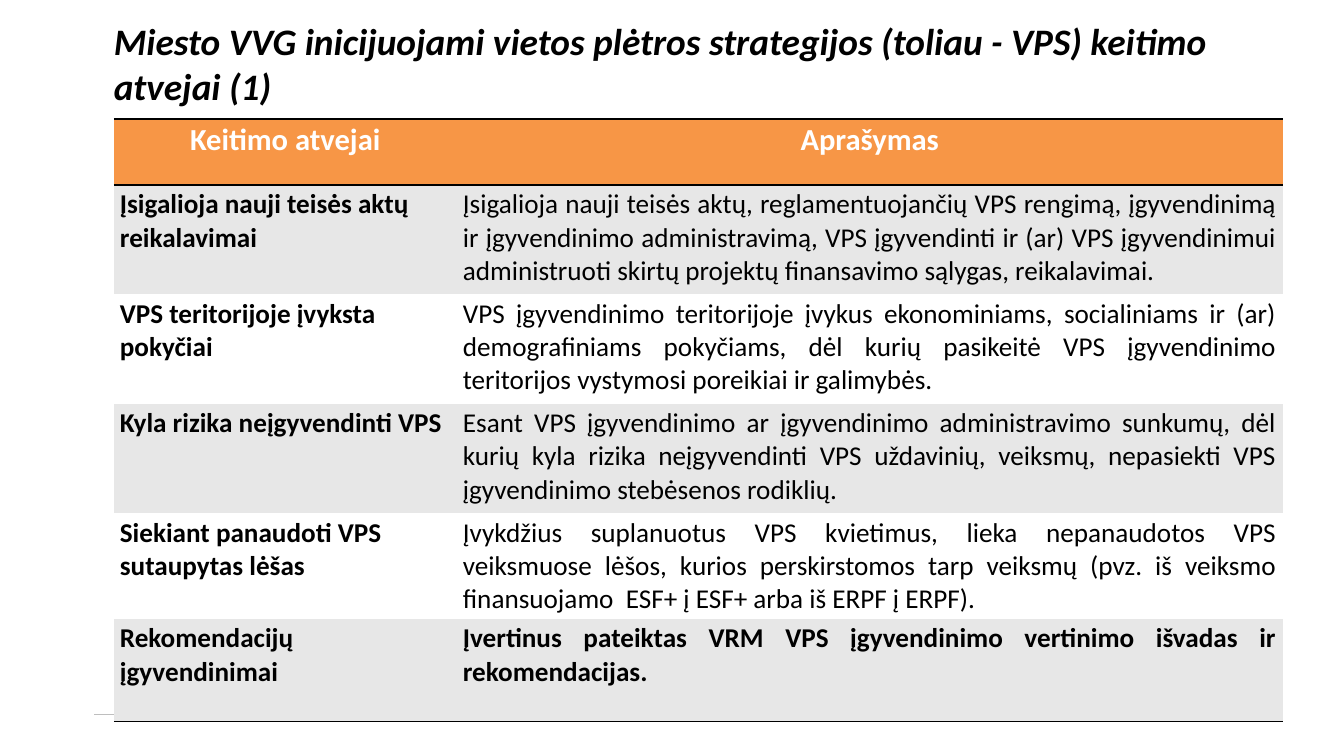
from lxml import etree
from pptx import Presentation
from pptx.dml.color import RGBColor
from pptx.enum.shapes import MSO_CONNECTOR
from pptx.enum.text import MSO_ANCHOR, MSO_AUTO_SIZE, PP_ALIGN
from pptx.oxml.ns import qn
from pptx.util import Pt

LEFT, CENTER, JUSTIFY = PP_ALIGN.LEFT, PP_ALIGN.CENTER, PP_ALIGN.JUSTIFY
TOP, NO_FIT = MSO_ANCHOR.TOP, MSO_AUTO_SIZE.NONE
STRAIGHT = MSO_CONNECTOR.STRAIGHT

# Content
TITLE = "Miesto VVG inicijuojami vietos plėtros strategijos (toliau - VPS) keitimo atvejai (1)"
HEADINGS = ("Keitimo atvejai", "Aprašymas")
CASES = [
    ("Įsigalioja nauji teisės aktų reikalavimai",
     "Įsigalioja nauji teisės aktų, reglamentuojančių VPS rengimą, įgyvendinimą ir "
     "įgyvendinimo administravimą, VPS įgyvendinti ir (ar) VPS įgyvendinimui "
     "administruoti skirtų projektų finansavimo sąlygas, reikalavimai."),
    ("VPS teritorijoje įvyksta pokyčiai",
     "VPS įgyvendinimo teritorijoje įvykus ekonominiams, socialiniams ir (ar) "
     "demografiniams pokyčiams, dėl kurių pasikeitė VPS įgyvendinimo teritorijos "
     "vystymosi poreikiai ir galimybės."),
    ("Kyla rizika neįgyvendinti VPS",
     "Esant VPS įgyvendinimo ar įgyvendinimo administravimo sunkumų, dėl kurių kyla "
     "rizika neįgyvendinti VPS uždavinių, veiksmų, nepasiekti VPS įgyvendinimo "
     "stebėsenos rodiklių."),
    ("Siekiant panaudoti VPS sutaupytas lėšas",
     "Įvykdžius suplanuotus VPS kvietimus, lieka nepanaudotos VPS veiksmuose lėšos, "
     "kurios perskirstomos tarp veiksmų (pvz. iš veiksmo finansuojamo  ESF+ į ESF+ "
     "arba iš ERPF į ERPF)."),
    ("Rekomendacijų įgyvendinimai",
     "Įvertinus pateiktas VRM VPS įgyvendinimo vertinimo išvadas ir rekomendacijas."),
]

# Layout in px, 72 px to the inch
EMU_PER_PX = 12700
SLIDE_W, SLIDE_H = 1583, 891
TITLE_BOX = (134, 22, 1389, 107)
TABLE_LEFT, TABLE_TOP = 134, 140
COLUMN_WIDTHS = (404, 973)
ROW_HEIGHTS = (78, 129, 129, 129, 124, 121)
FOOTER_RULE = (111, 842, 730, 842)

FONT = "Calibri"
BLACK, WHITE, ORANGE, GREY, RULE_GREY = "000000", "FFFFFF", "F79646", "E7E7E7", "BEBEBE"
NO_GRID_STYLE = "{2D5ABB26-0587-4C30-8999-92F81FD0307C}"


def px(*lengths):
    return [length * EMU_PER_PX for length in lengths]


def color(value):
    return RGBColor.from_string(value)


def write(frame, text, size, ink, align, bold=True, italic=False):
    frame.text = text
    paragraph = frame.paragraphs[0]
    paragraph.alignment = align
    font = paragraph.runs[0].font
    font.name, font.size, font.bold, font.italic = FONT, Pt(size), bold, italic
    font.color.rgb = color(ink)


def add_border(cell, side):
    """Draw a 2 pt black border; call before the cell is filled."""
    line = etree.SubElement(cell._tc.get_or_add_tcPr(), qn(f"a:ln{side}"), w=str(Pt(2)))
    fill = etree.SubElement(line, qn("a:solidFill"))
    etree.SubElement(fill, qn("a:srgbClr"), val=BLACK)


def add_footer_rule(slide):
    rule = slide.shapes.add_connector(STRAIGHT, *px(*FOOTER_RULE))
    rule.line.color.rgb = color(RULE_GREY)
    rule.line.width = Pt(0.4)
    etree.SubElement(rule._element.spPr, qn("a:effectLst"))


def add_title(slide):
    title = slide.shapes.title
    title.left, title.top, title.width, title.height = px(*TITLE_BOX)
    frame = title.text_frame
    frame.margin_left = frame.margin_right = frame.margin_top = frame.margin_bottom = 0
    frame.word_wrap, frame.auto_size, frame.vertical_anchor = True, NO_FIT, TOP
    write(frame, TITLE, 44, BLACK, LEFT, italic=True)


def add_cases_table(slide):
    rows = [HEADINGS] + CASES
    last = len(rows) - 1
    box = px(TABLE_LEFT, TABLE_TOP, sum(COLUMN_WIDTHS), sum(ROW_HEIGHTS))
    table = slide.shapes.add_table(len(rows), len(HEADINGS), *box).table
    table.first_row = table.horz_banding = False
    table._tbl.tblPr.find(qn("a:tableStyleId")).text = NO_GRID_STYLE
    for column, width in zip(table.columns, px(*COLUMN_WIDTHS)):
        column.width = width
    for row, height in zip(table.rows, px(*ROW_HEIGHTS)):
        row.height = height

    for r, texts in enumerate(rows):
        for c, text in enumerate(texts):
            cell = table.cell(r, c)
            # Borders frame the heading row and close the table
            sides = "TB" if r == 0 else "B" if r == last else ""
            for side in sides:
                add_border(cell, side)
            cell.fill.solid()
            if r == 0:
                cell.fill.fore_color.rgb = color(ORANGE)
                write(cell.text_frame, text, 36, WHITE, CENTER)
            else:
                cell.fill.fore_color.rgb = color(GREY if r % 2 else WHITE)
                align = JUSTIFY if c else LEFT
                write(cell.text_frame, text, 32, BLACK, align, bold=c == 0 or r == last)


def main():
    deck = Presentation()
    deck.slide_width, deck.slide_height = px(SLIDE_W, SLIDE_H)
    slide = deck.slides.add_slide(deck.slide_layouts[5])
    add_footer_rule(slide)
    add_title(slide)
    add_cases_table(slide)
    deck.save("out.pptx")


if __name__ == "__main__":
    main()
